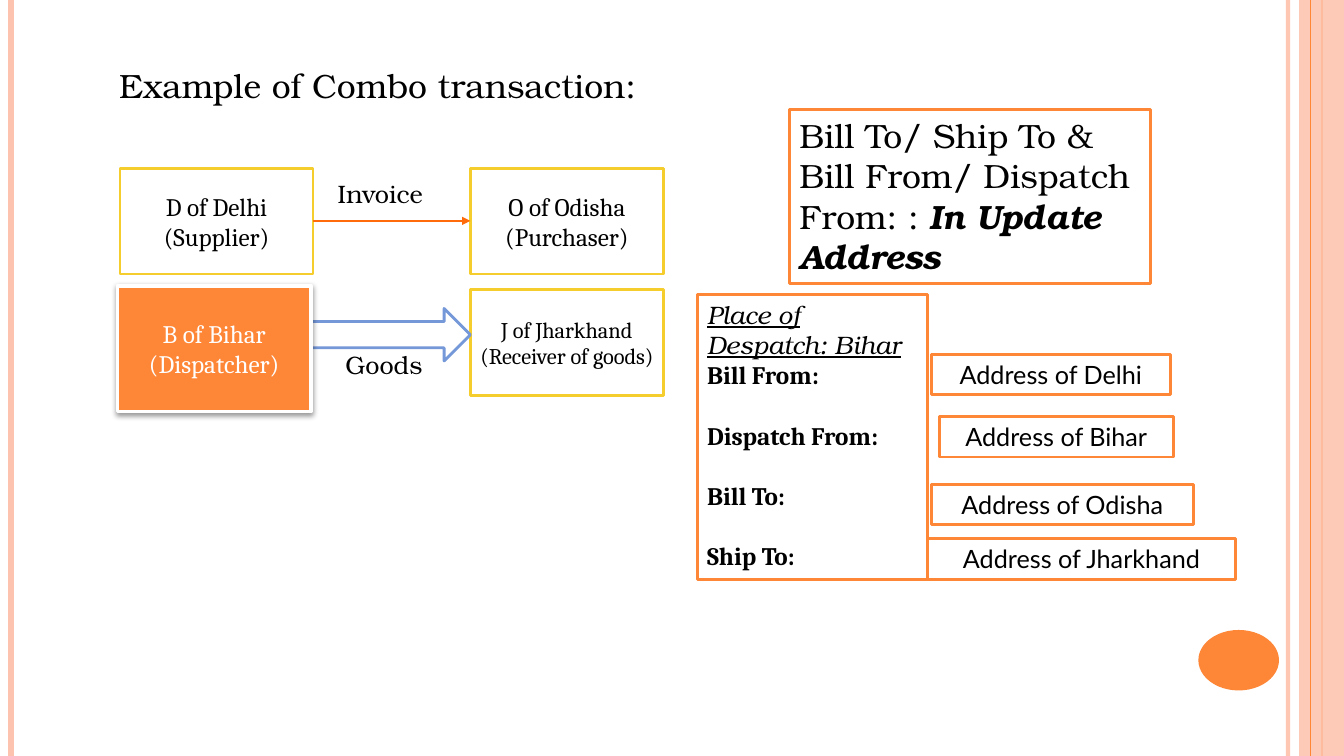
from dataclasses import dataclass
from typing import Optional

from lxml.etree import SubElement
from pptx import Presentation
from pptx.dml.color import RGBColor
from pptx.enum.shapes import MSO_CONNECTOR, MSO_SHAPE
from pptx.enum.text import MSO_ANCHOR, PP_ALIGN
from pptx.oxml.ns import qn
from pptx.util import Pt

COLORS = {
    "orange": "FE8637",
    "arrow": "FF6B0A",
    "peach": "FEC3AE",
    "yellow": "F5CD2D",
    "blue": "7598D9",
    "white": "FFFFFF",
    "black": "000000",
}
SERIF, HEADING, SANS = "Cambria", "TeX Gyre Bonum", "Lato"
SLIDE_WIDTH, SLIDE_HEIGHT = 960, 540


@dataclass
class Run:
    text: str
    font: str = HEADING
    size: float = 18
    color: str = "black"
    bold: bool = False
    italic: bool = False
    underline: bool = False


@dataclass
class Box:
    left: float
    top: float
    width: float
    height: float
    paragraphs: list[list[Run]]
    fill: Optional[str] = "white"
    line: Optional[str] = "orange"
    line_width: float = 2
    align: PP_ALIGN = PP_ALIGN.CENTER
    anchor: MSO_ANCHOR = MSO_ANCHOR.TOP
    gap: float = 0  # space before the third and later paragraphs


@dataclass
class Line:
    start: tuple[float, float]
    end: tuple[float, float]
    color: str
    width: float
    opacity: int = 100
    arrow: bool = False


def vertical_rule(x: float, color: str, width: float, opacity: int = 100) -> Line:
    return Line((x, 0), (x, SLIDE_HEIGHT), color, width, opacity)


def party(left: float, top: float, text: str, size: float = 18) -> Box:
    return Box(left, top, 138, 75.6, [[Run(text, SERIF, size)]],
               line="yellow", anchor=MSO_ANCHOR.MIDDLE)


def address(left: float, top: float, width: float, place: str) -> Box:
    return Box(left, top, width, 29, [[Run(f"Address of {place}", SANS)]])


def label(left: float, top: float, width: float, height: float, run: Run,
          align: PP_ALIGN = PP_ALIGN.LEFT) -> Box:
    return Box(left, top, width, height, [[run]], None, None, align=align)


def rgb(name: str) -> RGBColor:
    return RGBColor.from_string(COLORS[name])


def set_opacity(fill_parent, percent: int) -> None:
    color = next(fill_parent.iter(qn("a:srgbClr")))
    SubElement(color, qn("a:alpha"), val=str(percent * 1000))


def draw_line(slide, line: Line) -> None:
    connector = slide.shapes.add_connector(
        MSO_CONNECTOR.STRAIGHT, *(Pt(value) for value in line.start + line.end))
    connector.line.color.rgb = rgb(line.color)
    connector.line.width = Pt(line.width)
    properties = connector._element.spPr
    if line.opacity < 100:
        set_opacity(properties, line.opacity)
    if line.arrow:
        SubElement(properties.find(qn("a:ln")), qn("a:tailEnd"), type="triangle")
    SubElement(properties, qn("a:effectLst"))


def draw_shape(slide, kind: MSO_SHAPE, bounds: tuple[float, ...],
               fill: str, line: Optional[str] = None, line_width: float = 2):
    shape = slide.shapes.add_shape(kind, *(Pt(value) for value in bounds))
    shape.shadow.inherit = False
    shape.fill.solid()
    shape.fill.fore_color.rgb = rgb(fill)
    if line:
        shape.line.color.rgb = rgb(line)
        shape.line.width = Pt(line_width)
    else:
        shape.line.fill.background()
    return shape


def add_shadow(shape) -> None:
    effects = shape._element.spPr.find(qn("a:effectLst"))
    shadow = SubElement(effects, qn("a:outerShdw"), blurRad=str(Pt(4)),
                        dist=str(Pt(2)), dir="5400000", rotWithShape="0")
    color = SubElement(shadow, qn("a:srgbClr"), val=COLORS["black"])
    SubElement(color, qn("a:alpha"), val="40000")


def draw_box(slide, box: Box):
    bounds = (box.left, box.top, box.width, box.height)
    if box.fill:
        shape = draw_shape(slide, MSO_SHAPE.RECTANGLE, bounds,
                           box.fill, box.line, box.line_width)
    else:
        shape = slide.shapes.add_textbox(*(Pt(value) for value in bounds))
    frame = shape.text_frame
    frame.word_wrap = True
    frame.vertical_anchor = box.anchor
    frame.text = "\n".join("".join(run.text for run in runs) for runs in box.paragraphs)
    for index, (paragraph, runs) in enumerate(zip(frame.paragraphs, box.paragraphs)):
        paragraph.alignment = box.align
        if box.gap and index > 1:
            paragraph.space_before = Pt(box.gap)
        paragraph.runs[0].text = runs[0].text
        for _ in runs[1:]:
            paragraph.add_run()
        for run, style in zip(paragraph.runs, runs):
            run.text = style.text
            run.font.name = style.font
            run.font.size = Pt(style.size)
            run.font.color.rgb = rgb(style.color)
            run.font.bold = style.bold
            run.font.italic = style.italic
            run.font.underline = style.underline
    return shape


PARTIES = [
    party(85.7, 120.2, "D of Delhi (Supplier)"),
    party(336, 120.2, "O of Odisha (Purchaser)"),
    party(336, 206.9, "J of Jharkhand (Receiver of goods)", 16),
]
DISPATCHER = Box(84, 204, 138, 90, [[Run("B of Bihar (Dispatcher)", SERIF, color="white")]],
                 "orange", "white", 2.75, anchor=MSO_ANCHOR.MIDDLE)
LABELS = [
    label(222, 246, 104.4, 29, Run("Goods"), PP_ALIGN.CENTER),
    label(234, 124, 80.6, 29, Run("Invoice")),
    label(78, 42.5, 402.5, 36, Run("Example of Combo transaction:", size=24)),
]
FIELDS = ["Bill From:", "Dispatch From:", "Bill To:", "Ship To:"]
DETAILS = [
    Box(564, 78.5, 258, 123.8,
        [[Run("Bill To/ Ship To & Bill From/ Dispatch From: : ", size=24),
          Run("In Update Address", size=24, bold=True, italic=True)]],
        align=PP_ALIGN.LEFT),
    Box(498, 210.2, 164.4, 203.8,
        [[Run("Place of Despatch: Bihar", italic=True, underline=True)]]
        + [[Run(field, SERIF, bold=True)] for field in FIELDS],
        align=PP_ALIGN.LEFT, gap=21.5),
    address(665.3, 253.1, 170.6, "Delhi"),
    address(671, 297.4, 167, "Bihar"),
    address(665.3, 345.8, 187, "Odisha"),
    address(662.4, 384.8, 220.3, "Jharkhand"),
]


def main() -> None:
    presentation = Presentation()
    presentation.slide_width = Pt(SLIDE_WIDTH)
    presentation.slide_height = Pt(SLIDE_HEIGHT)
    slide = presentation.slides.add_slide(presentation.slide_layouts[6])

    for rule in (vertical_rule(920, "peach", 3, 93), vertical_rule(8, "peach", 4.5),
                 vertical_rule(944, "orange", 1.5)):
        draw_line(slide, rule)
    band = draw_shape(slide, MSO_SHAPE.RECTANGLE, (928, 0, 32, SLIDE_HEIGHT), "peach")
    set_opacity(band._element.spPr, 87)
    draw_line(slide, vertical_rule(936, "orange", 0.75))
    draw_shape(slide, MSO_SHAPE.OVAL, (856, 450, 57.6, 43.2), "orange")

    for box in PARTIES:
        draw_box(slide, box)
    draw_line(slide, Line((223.7, 157.8), (336, 157.8), "arrow", 1, arrow=True))
    draw_shape(slide, MSO_SHAPE.RIGHT_ARROW, (222, 220.3, 114, 37.5), "white", "blue")
    add_shadow(draw_box(slide, DISPATCHER))
    for box in LABELS + DETAILS:
        draw_box(slide, box)

    presentation.save("out.pptx")


if __name__ == "__main__":
    main()
